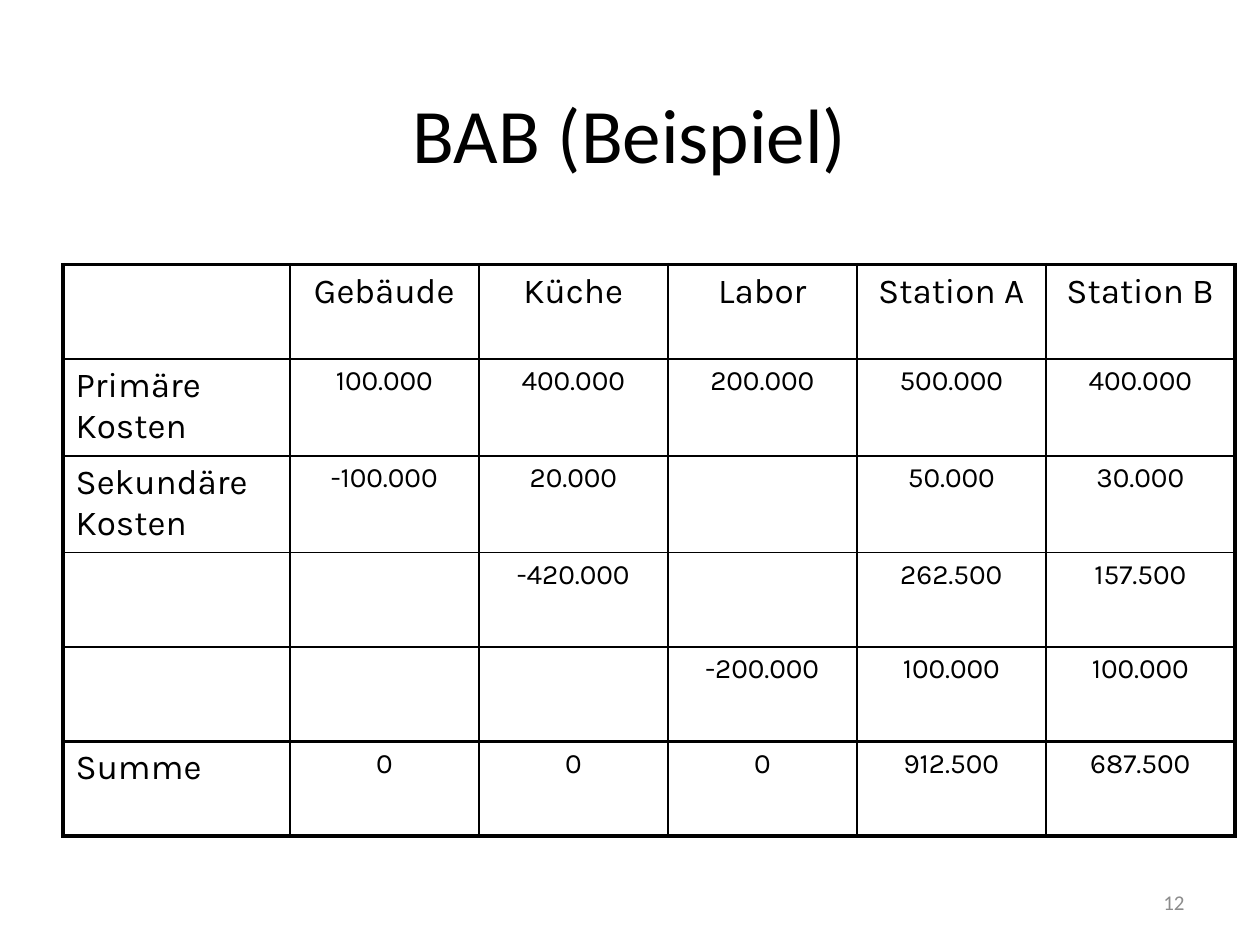
from lxml import etree
from pptx import Presentation
from pptx import util as u
from pptx.dml.color import RGBColor
from pptx.enum import text
from pptx.oxml import ns

COLORS = {"ink": "000000", "muted": "8C8C8C"}
SLIDE_WIDTH, SLIDE_HEIGHT = u.Inches(10), u.Inches(7.5)
LEFT, CENTER, RIGHT = text.PP_ALIGN.LEFT, text.PP_ALIGN.CENTER, text.PP_ALIGN.RIGHT
THIN, THICK = 1, 2.25
COLUMN_SHARES = [1.2, 1, 1, 1, 1, 1]
COST_ROWS = [
    ["", "Gebäude", "Küche", "Labor", "Station A", "Station B"],
    ["Primäre Kosten", "100.000", "400.000", "200.000", "500.000", "400.000"],
    ["Sekundäre Kosten", "-100.000", "20.000", "", "50.000", "30.000"],
    ["", "", "-420.000", "", "262.500", "157.500"],
    ["", "", "", "-200.000", "100.000", "100.000"],
    ["Summe", "0", "0", "0", "912.500", "687.500"],
]


def share_box(left, top, width, height):
    return (int(left * SLIDE_WIDTH), int(top * SLIDE_HEIGHT),
            int(width * SLIDE_WIDTH), int(height * SLIDE_HEIGHT))


def write(frame, words, align, size, font, color):
    para = frame.paragraphs[0]
    para.alignment = align
    span = para.add_run()
    span.text = words
    for name, value in {"size": u.Pt(size), "name": font}.items():
        setattr(span.font, name, value)
    span.font.color.rgb = RGBColor.from_string(COLORS[color])


def add_text(page, box, words, **style):
    frame = page.shapes.add_textbox(*box).text_frame
    for name, value in {"word_wrap": True, "vertical_anchor": text.MSO_ANCHOR.MIDDLE}.items():
        setattr(frame, name, value)
    write(frame, words, **style)


def set_borders(cell, widths):
    props = cell._tc.get_or_add_tcPr()
    for position, (side, width) in enumerate(widths.items()):
        line = etree.Element(ns.qn(f"a:ln{side}"), w=str(u.Pt(width)))
        fill = etree.SubElement(line, ns.qn("a:solidFill"))
        etree.SubElement(fill, ns.qn("a:srgbClr"), val=COLORS["ink"])
        props.insert(position, line)


def add_cost_table(page, box):
    last_row, last_column = len(COST_ROWS) - 1, len(COLUMN_SHARES) - 1
    table = page.shapes.add_table(last_row + 1, last_column + 1, *box).table
    for name in ("first_row", "horz_banding"):
        setattr(table, name, False)
    for column, share in zip(table.columns, COLUMN_SHARES):
        column.width = int(box[2] * share / sum(COLUMN_SHARES))
    for r, values in enumerate(COST_ROWS):
        for c, words in enumerate(values):
            cell = table.cell(r, c)
            cell.fill.background()
            set_borders(cell, {
                "L": THICK if c == 0 else THIN,
                "R": THICK if c == last_column else THIN,
                "T": THICK if r in (0, last_row) else THIN,
                "B": THICK if r >= last_row - 1 else THIN,
            })
            if words:
                write(cell.text_frame, words, LEFT if c == 0 else CENTER,
                      20 if r == 0 or c == 0 else 16, "Karla", "ink")


def main():
    deck = Presentation()
    deck.slide_width, deck.slide_height = SLIDE_WIDTH, SLIDE_HEIGHT
    page = deck.slides.add_slide(deck.slide_layouts[6])
    add_text(page, share_box(0.05, 0.04, 0.9, 0.2), "BAB (Beispiel)",
             align=CENTER, size=44, font="Calibri", color="ink")
    add_cost_table(page, share_box(0.05, 0.28, 0.93, 0.6))
    add_text(page, share_box(0.72, 0.93, 0.23, 0.05), "12",
             align=RIGHT, size=12, font="Calibri", color="muted")
    deck.save("out.pptx")


if __name__ == "__main__":
    main()
